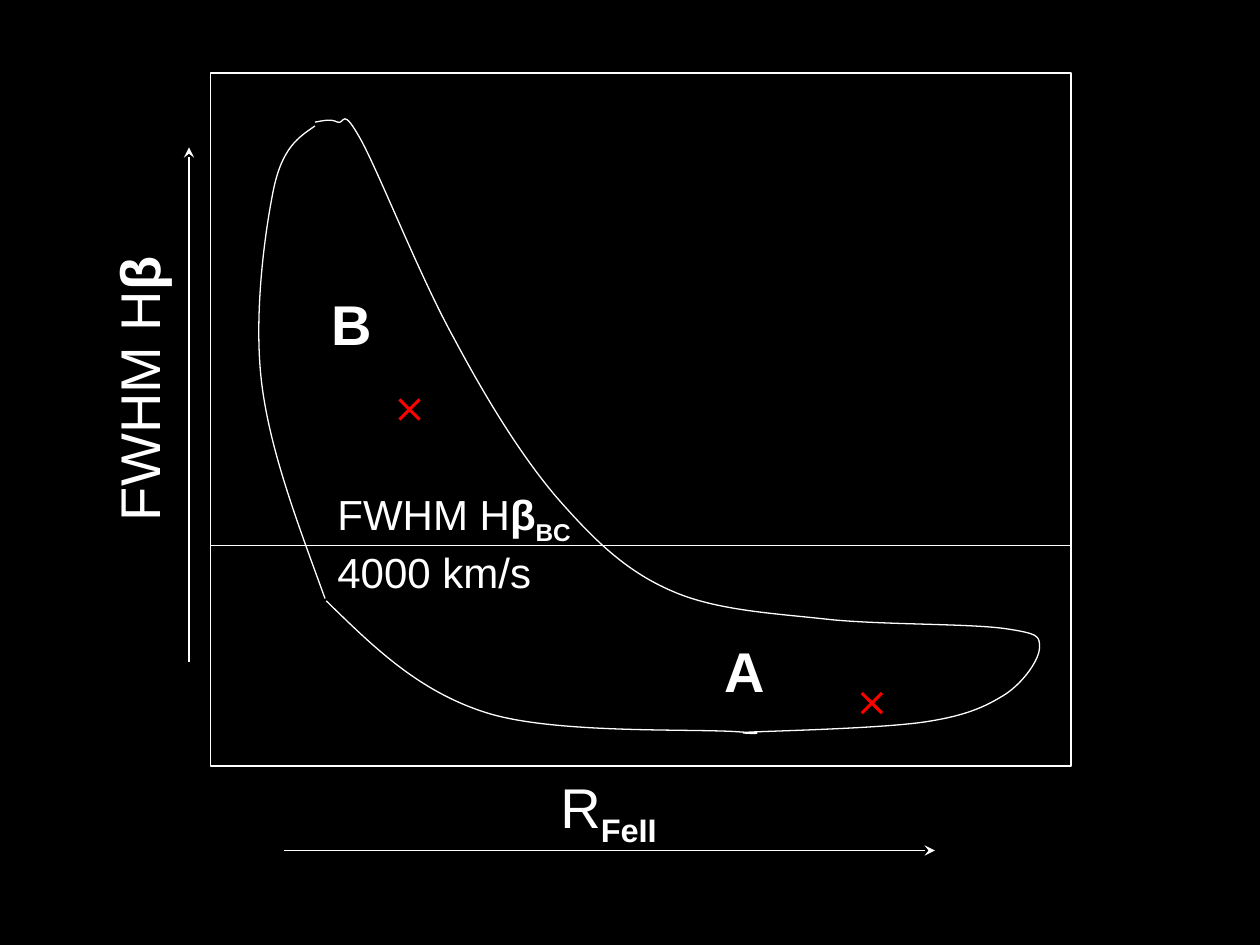
from lxml import etree
from pptx import Presentation
from pptx import util as u
from pptx.dml.color import RGBColor
from pptx.enum import shapes, text
from pptx.oxml.ns import qn

BLACK = RGBColor(0x00, 0x00, 0x00)
WHITE = RGBColor(0xFF, 0xFF, 0xFF)
RED = RGBColor(0xFF, 0x00, 0x00)
FONT = "Arial"

# Content: lengths in inches
FRAME = (1.67, 0.58, 6.83, 5.5)
LIMIT = 4.33  # height of the 4000 km/s line
ARROWS = [((1.5, 5.25), (1.5, 1.17)), ((2.25, 6.75), (7.42, 6.75))]
CROSSES = [(6.92, 5.58), (3.25, 3.25)]
ARM = 0.08

# Box, size, centred, turn, runs of (words, bold, subscript)
LABELS = [
    ((3.83, 6.08, 2, 0.63), 32, True, 0, [("R", False, False), ("FeII", True, True)]),
    ((-1.07, 2.77, 4.33, 0.63), 32, True, 270, [("FWHM H", False, False), ("β", True, False)]),
    ((2.25, 2.25, 1.08, 0.63), 32, True, 0, [("B", True, False)]),
    ((5.08, 5, 1.67, 0.63), 32, True, 0, [("A", True, False)]),
    ((2.58, 3.83, 2.17, 0.9), 24, False, 0,
     [("FWHM H", False, False), ("β", True, False), ("BC", True, True),
      (" 4000 km/s", False, False)]),
]

# Outline of the banana: a start, then two controls and an end per curve
LEFT = [(2.58, 4.75), (2.37, 4.17), (2.15, 3.6), (2.08, 3.06),
        (2.01, 2.52), (2.1, 1.86), (2.17, 1.51),
        (2.24, 1.17), (2.37, 1.09), (2.5, 1)]
RIGHT = [(2.5, 0.97), (2.56, 0.96), (2.62, 0.94), (2.68, 0.97),
         (2.74, 0.99), (2.71, 0.83), (2.87, 1.12),
         (3.02, 1.4), (3.34, 2.21), (3.6, 2.68),
         (3.85, 3.15), (4.13, 3.61), (4.42, 3.95),
         (4.71, 4.28), (4.96, 4.53), (5.33, 4.69),
         (5.69, 4.85), (6.17, 4.87), (6.61, 4.92),
         (7.05, 4.96), (7.7, 4.95), (7.98, 4.99),
         (8.25, 5.03), (8.25, 5.05), (8.25, 5.14),
         (8.25, 5.23), (8.13, 5.41), (7.98, 5.51),
         (7.82, 5.61), (7.67, 5.68), (7.34, 5.73),
         (7, 5.78), (6.21, 5.8), (5.97, 5.81),
         (5.72, 5.82), (6.23, 5.83), (5.88, 5.81),
         (5.53, 5.78), (4.42, 5.83), (3.87, 5.66),
         (3.32, 5.49), (2.96, 5.13), (2.59, 4.77)]


def inch(vals):
    return [u.Inches(v) for v in vals]


def trim(shape, width=0.75):
    shape.shadow.inherit = False
    shape.fill.background()
    shape.line.color.rgb = WHITE
    shape.line.width = u.Pt(width)


def add_line(slide, start, end, color, width, arrow=False):
    line = slide.shapes.add_connector(
        shapes.MSO_CONNECTOR.STRAIGHT, *inch(start), *inch(end))
    line.line.color.rgb = color
    line.line.width = u.Pt(width)
    props = line._element.spPr
    if arrow:
        etree.SubElement(props.find(qn("a:ln")), qn("a:tailEnd"), type="stealth")
    etree.SubElement(props, qn("a:effectLst"))


def add_curve(slide, points):
    first, *rest = [inch(p) for p in points]
    build = slide.shapes.build_freeform(*first)
    build.add_line_segments(rest, close=False)
    shape = build.convert_to_shape()
    trim(shape)
    # Join every three line steps into one cubic curve
    steps = list(shape._element.iter(qn("a:lnTo")))
    for i in range(0, len(steps), 3):
        cubic = etree.Element(qn("a:cubicBezTo"))
        steps[i].addprevious(cubic)
        for step in steps[i:i + 3]:
            cubic.append(step[0])
            step.getparent().remove(step)


def add_label(slide, box, size, mid, turn, runs):
    shape = slide.shapes.add_textbox(*inch(box))
    shape.rotation = turn
    frame = shape.text_frame
    frame.word_wrap = True
    frame.auto_size = text.MSO_AUTO_SIZE.SHAPE_TO_FIT_TEXT
    para = frame.paragraphs[0]
    para.alignment = text.PP_ALIGN.CENTER if mid else text.PP_ALIGN.LEFT
    para.space_before = u.Pt(3)
    for words, bold, sub in runs:
        run = para.add_run()
        run.text = words
        font = run.font
        font.name, font.size, font.bold = FONT, u.Pt(size), bold
        font.color.rgb = WHITE
        if sub:
            run._r.get_or_add_rPr().set("baseline", "-25000")


def main():
    deck = Presentation()
    deck.slide_width, deck.slide_height = inch((10, 7.5))
    slide = deck.slides.add_slide(deck.slide_layouts[6])
    slide.background.fill.solid()
    slide.background.fill.fore_color.rgb = BLACK

    # Plot frame, limit line and axis arrows
    trim(slide.shapes.add_shape(shapes.MSO_SHAPE.RECTANGLE, *inch(FRAME)))
    left, _, wide, _ = FRAME
    add_line(slide, (left, LIMIT), (left + wide, LIMIT), WHITE, 0.75)
    for start, end in ARROWS:
        add_line(slide, start, end, WHITE, 1, arrow=True)

    # Outline and labels
    for points in (LEFT, RIGHT):
        add_curve(slide, points)
    for label in LABELS:
        add_label(slide, *label)

    # Red crosses
    for x, y in CROSSES:
        for dy in (ARM, -ARM):
            add_line(slide, (x - ARM, y - dy), (x + ARM, y + dy), RED, 1.75)

    deck.save("out.pptx")


if __name__ == "__main__":
    main()
